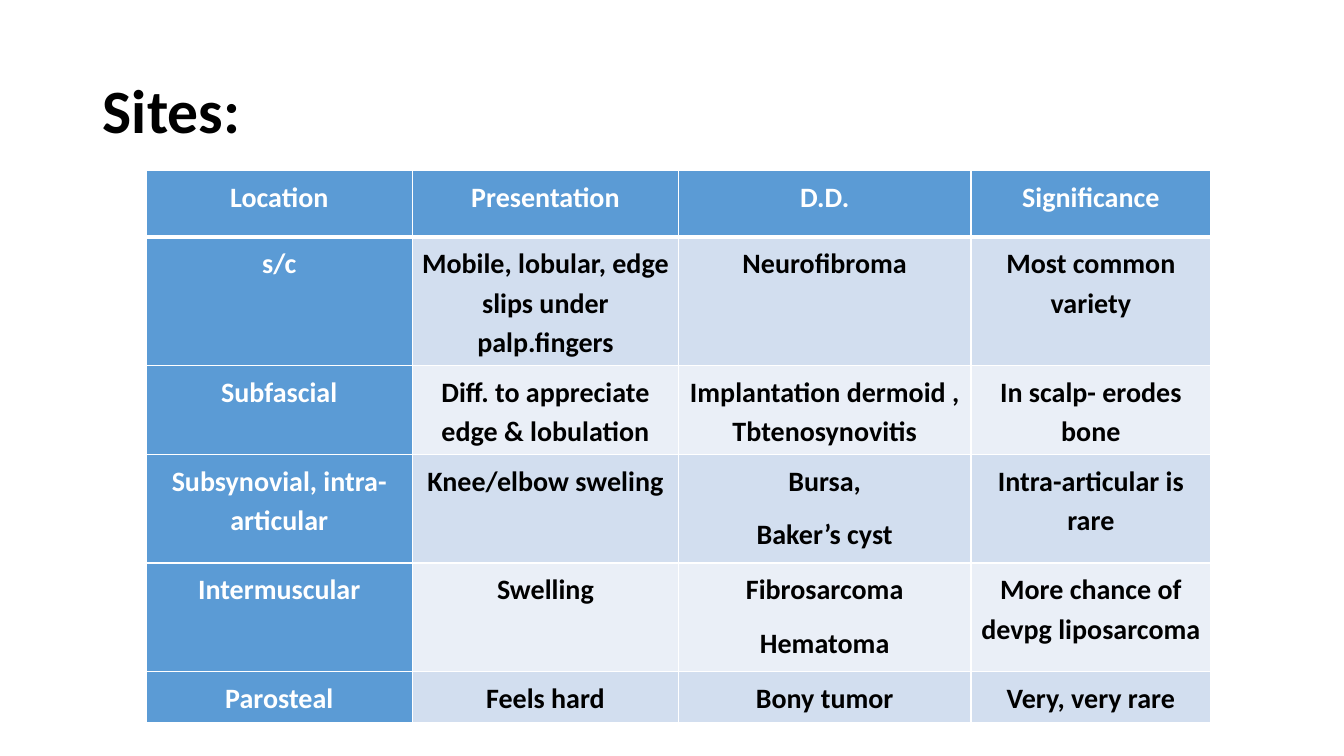
from lxml import etree
from pptx import Presentation
from pptx.dml.color import RGBColor
from pptx.enum.text import MSO_ANCHOR, PP_ALIGN
from pptx.oxml.ns import qn
from pptx.util import Pt

TITLE = "Sites:"
ROWS = [
    ("Location", "Presentation", "D.D.", "Significance"),
    ("s/c", "Mobile, lobular, edge slips under palp.fingers",
     "Neurofibroma", "Most common variety"),
    ("Subfascial", "Diff. to appreciate edge & lobulation",
     "Implantation dermoid , Tbtenosynovitis", "In scalp- erodes bone"),
    ("Subsynovial, intra-articular", "Knee/elbow sweling",
     "Bursa,\nBaker’s cyst", "Intra-articular is rare"),
    ("Intermuscular", "Swelling",
     "Fibrosarcoma\nHematoma", "More chance of devpg liposarcoma"),
    ("Parosteal", "Feels hard", "Bony tumor", "Very, very rare"),
]
COLORS = {"head": "5B9BD5", "odd": "D2DEEF", "even": "EAEFF7",
          "white": "FFFFFF", "black": "000000"}
FONT = "Calibri"
CENTER = PP_ALIGN.CENTER
LEFT = PP_ALIGN.LEFT
MIDDLE = MSO_ANCHOR.MIDDLE

# Lengths in px, 100 to the inch
SCALE = 9144
SLIDE = (1333, 750)
TITLE_BOX = (92, 40, 1150, 145)
TABLE_AT = (145, 169)
WIDTHS = (264, 264, 290, 238)
HEIGHTS = (66, 86, 86, 108, 108, 50)
PAD_X, PAD_Y = 9, 5


def px(n):
    return n * SCALE


def rgb(name):
    return RGBColor.from_string(COLORS[name])


def style(para, size, color, align, spacing):
    para.alignment = align
    para.line_spacing = spacing
    font = para.font
    font.name, font.size, font.bold = FONT, Pt(size), True
    font.color.rgb = rgb(color)


def border(cell, top, bottom):
    """Draw white cell edges; top and bottom are widths in points."""
    props = cell._tc.get_or_add_tcPr()
    edges = (("L", 1), ("R", 1), ("T", top), ("B", bottom))
    for pos, (side, width) in enumerate(edges):
        line = etree.Element(qn("a:ln" + side), w=str(Pt(width)))
        fill = etree.SubElement(line, qn("a:solidFill"))
        etree.SubElement(fill, qn("a:srgbClr"), val=COLORS["white"])
        props.insert(pos, line)


def fill_cell(cell, text, row, col):
    head = row == 0 or col == 0
    band = "odd" if row % 2 else "even"
    cell.margin_left = cell.margin_right = px(PAD_X)
    cell.margin_top = cell.margin_bottom = px(PAD_Y)
    cell.fill.solid()
    cell.fill.fore_color.rgb = rgb("head" if head else band)
    border(cell, 3 if row == 1 else 1, 3 if row == 0 else 1)
    cell.text_frame.text = text
    for para in cell.text_frame.paragraphs:
        style(para, 20, "white" if head else "black", CENTER, 1.15)
        para.space_after = Pt(10)


def add_title(slide):
    title = slide.shapes.title
    title.left, title.top, title.width, title.height = map(px, TITLE_BOX)
    frame = title.text_frame
    frame.text = TITLE
    frame.vertical_anchor = MIDDLE
    style(frame.paragraphs[0], 44, "black", LEFT, 0.9)


def add_grid(slide):
    box = map(px, (*TABLE_AT, sum(WIDTHS), sum(HEIGHTS)))
    table = slide.shapes.add_table(len(ROWS), len(WIDTHS), *box).table
    table.first_col = True
    for col, width in zip(table.columns, WIDTHS):
        col.width = px(width)
    for row, height in zip(table.rows, HEIGHTS):
        row.height = px(height)
    for r, texts in enumerate(ROWS):
        for c, text in enumerate(texts):
            fill_cell(table.cell(r, c), text, r, c)


def main():
    deck = Presentation()
    deck.slide_width, deck.slide_height = map(px, SLIDE)
    slide = deck.slides.add_slide(deck.slide_layouts.get_by_name("Title Only"))
    add_title(slide)
    add_grid(slide)
    deck.save("out.pptx")


if __name__ == "__main__":
    main()
